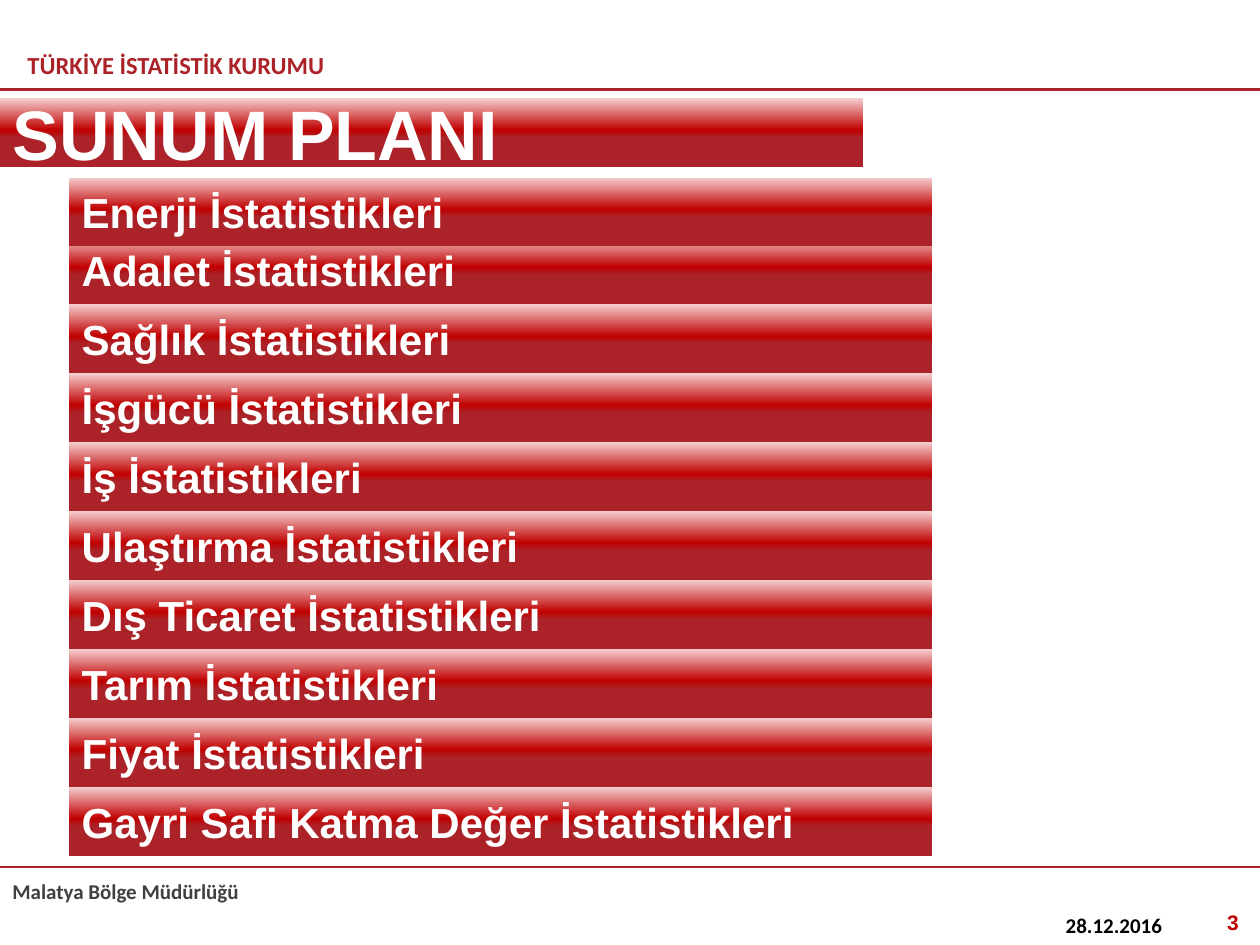
from lxml import etree
from pptx import Presentation
from pptx.dml.color import RGBColor
from pptx.enum import shapes, text
from pptx.oxml import ns, parse_xml
from pptx.util import Pt

RED = "AB2328"
WHITE = "FFFFFF"
GRADIENT = [(0, WHITE), (0, "F5CDCE"), (46, "C00000"), (57, RED)]
TITLE = "SUNUM PLANI"
TOPICS = [
    "Enerji İstatistikleri",
    "Adalet İstatistikleri",
    "Sağlık İstatistikleri",
    "İşgücü İstatistikleri",
    "İş İstatistikleri",
    "Ulaştırma İstatistikleri",
    "Dış Ticaret İstatistikleri",
    "Tarım İstatistikleri",
    "Fiyat İstatistikleri",
    "Gayri Safi Katma Değer İstatistikleri",
]
RULES = [51.1, 495.4]
BAR_W, BAR_H = 493.2, 39.4
TITLE_TOP, FIRST_TOP, SECOND_TOP, TOPIC_LEFT = 56.2, 101.5, 134.6, 39.6


def rgb(value):
    return RGBColor.from_string(value)


def write(sp, content, size, color, font="Calibri", align=text.PP_ALIGN.LEFT,
          anchor=text.MSO_ANCHOR.TOP, underline=None, top_inset=3.6):
    tf = sp.text_frame
    tf.word_wrap = True
    tf.vertical_anchor = anchor
    tf.margin_top = Pt(top_inset)
    p = tf.paragraphs[0]
    p.alignment = align
    r = p.add_run()
    r.text = content
    r.font.name = font
    r.font.size = Pt(size)
    r.font.bold = True
    r.font.underline = underline
    r.font.color.rgb = rgb(color)
    return r


def add_text(s, box, content, size, color, **fmt):
    sp = s.shapes.add_textbox(*map(Pt, box))
    return write(sp, content, size, color, **fmt)


def add_rule(s, y):
    line = s.shapes.add_connector(shapes.MSO_CONNECTOR.STRAIGHT, 0, Pt(y), Pt(720), Pt(y))
    line.line.color.rgb = rgb(RED)
    line.line.width = Pt(1.5)
    etree.SubElement(line._element.spPr, ns.qn("a:effectLst"))


def add_bar(s, left, top, content, size, **fmt):
    sp = s.shapes.add_shape(shapes.MSO_SHAPE.RECTANGLE, Pt(left), Pt(top), Pt(BAR_W), Pt(BAR_H))
    sp.shadow.inherit = False
    sp.line.fill.background()
    stops = "".join(f'<a:gs pos="{pos * 1000}"><a:srgbClr val="{color}"/></a:gs>'
                    for pos, color in GRADIENT)
    fill = parse_xml(f'<a:gradFill {ns.nsdecls("a")} rotWithShape="1"><a:gsLst>{stops}</a:gsLst>'
                     '<a:lin ang="5400000" scaled="0"/></a:gradFill>')
    sp._element.spPr.find(ns.qn("a:prstGeom")).addnext(fill)
    write(sp, content, size, WHITE, font="Arial", anchor=text.MSO_ANCHOR.MIDDLE, **fmt)


def outline(r, color, width):
    ln = parse_xml(f'<a:ln {ns.nsdecls("a")} w="{Pt(width)}"><a:solidFill>'
                   f'<a:srgbClr val="{color}"/></a:solidFill></a:ln>')
    r.font._element.insert(0, ln)


def main():
    prs = Presentation()
    prs.slide_width, prs.slide_height = Pt(720), Pt(540)
    s = prs.slides.add_slide(prs.slide_layouts[6])

    add_text(s, (8.6, 13.7, 254.9, 28.1), "TÜRKİYE İSTATİSTİK KURUMU", 14, RED, top_inset=15)
    add_text(s, (0, 498.2, 308.9, 37.4), "Malatya Bölge Müdürlüğü", 12, "404040")
    for y in RULES:
        add_rule(s, y)
    add_text(s, (601.9, 517.7, 167.8, 37.4), "28.12.2016", 12, "000000")
    number = add_text(s, (547.2, 516.2, 167.8, 37.4), "3", 12, "C00000", font="Arial",
                      align=text.PP_ALIGN.RIGHT)
    outline(number, RED, 0.75)

    add_bar(s, 0, TITLE_TOP, TITLE, 40, underline=True)
    tops = [FIRST_TOP] + [SECOND_TOP + i * BAR_H for i in range(len(TOPICS) - 1)]
    for topic, top in reversed(list(zip(TOPICS, tops))):
        add_bar(s, TOPIC_LEFT, top, topic, 24)

    prs.save("out.pptx")


if __name__ == "__main__":
    main()
